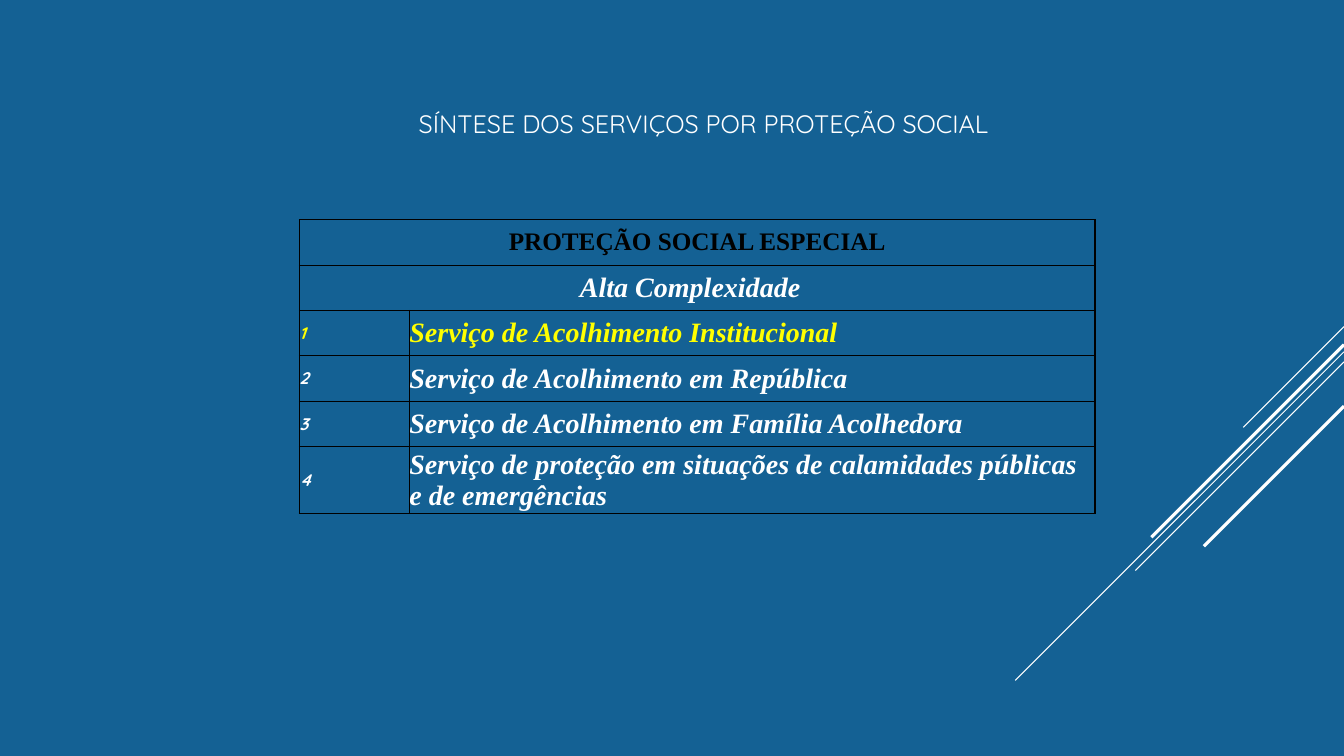
from dataclasses import dataclass

from lxml.etree import SubElement
from pptx import Presentation
from pptx.dml.color import RGBColor
from pptx.enum.shapes import MSO_CONNECTOR
from pptx.enum.text import MSO_ANCHOR, PP_ALIGN
from pptx.oxml.ns import qn
from pptx.util import Inches, Pt


@dataclass(frozen=True)
class Theme:
    background: str = "146194"
    light: str = "FFFFFF"
    dark: str = "000000"
    highlight: str = "FFFF00"
    title_font: str = "Quicksand"
    table_font: str = "Times New Roman"
    heading_size: int = 18
    service_size: int = 20
    number_size: int = 12
    border_width: float = 1


THEME = Theme()
WIDTH, HEIGHT = 13.33, 7.5

# Diagonal rays from the right edge: start height, horizontal run, width in points
RAYS = [(3.24, 1.0, 0.75), (3.49, 3.26, 0.75), (3.59, 2.07, 0.75),
        (3.42, 1.91, 2.25), (4.03, 1.39, 2.25)]

TABLE_LEFT, TABLE_TOP = 2.97, 2.18
COLUMNS = [1.09, 6.8]
ROW_HEIGHT = 0.45
SERVICES = [
    "Serviço de Acolhimento Institucional",
    "Serviço de Acolhimento em República",
    "Serviço de Acolhimento em Família Acolhedora",
    "Serviço de proteção em situações de calamidades públicas e de emergências",
]


def write(frame, text, font, size, color, bold=False, italic=False,
          align=PP_ALIGN.LEFT):
    """Fill a text frame with one formatted paragraph."""
    frame.text = text
    para = frame.paragraphs[0]
    para.alignment = align
    span = para.runs[0].font
    span.name, span.size = font, Pt(size)
    span.bold, span.italic = bold, italic
    span.color.rgb = RGBColor.from_string(color)


def add_ray(page, top, run, width):
    """Draw a 45 degree line down and left from the right edge."""
    ray = page.shapes.add_connector(
        MSO_CONNECTOR.STRAIGHT, Inches(WIDTH), Inches(top),
        Inches(WIDTH - run), Inches(top + run))
    ray.line.color.rgb = RGBColor.from_string(THEME.light)
    ray.line.width = Pt(width)
    SubElement(ray._element.spPr, qn("a:effectLst"))


def add_title(page, text):
    box = page.shapes.add_textbox(
        Inches(2.73), Inches(0.6), Inches(8.5), Inches(1.25))
    frame = box.text_frame
    frame.word_wrap = True
    frame.vertical_anchor = MSO_ANCHOR.MIDDLE
    frame.margin_left = frame.margin_right = 0
    frame.margin_top = frame.margin_bottom = 0
    write(frame, text, THEME.title_font, THEME.heading_size, THEME.light,
          align=PP_ALIGN.CENTER)


def style_cell(cell):
    """Remove margins and fill, and outline the cell."""
    cell.margin_left = cell.margin_right = 0
    cell.margin_top = cell.margin_bottom = 0
    cell.vertical_anchor = MSO_ANCHOR.MIDDLE
    properties = cell._tc.get_or_add_tcPr()
    for side in ("a:lnL", "a:lnR", "a:lnT", "a:lnB"):
        border = SubElement(properties, qn(side), w=str(Pt(THEME.border_width)))
        fill = SubElement(border, qn("a:solidFill"))
        SubElement(fill, qn("a:srgbClr"), val=THEME.dark)
    cell.fill.background()


def add_services_table(page):
    row_count = len(SERVICES) + 2
    table = page.shapes.add_table(
        row_count, len(COLUMNS), Inches(TABLE_LEFT), Inches(TABLE_TOP),
        Inches(sum(COLUMNS)), Inches(ROW_HEIGHT * row_count)).table
    table.first_row = table.horz_banding = False
    for column, width in zip(table.columns, COLUMNS):
        column.width = Inches(width)
    for row in table.rows:
        row.height = Inches(ROW_HEIGHT)
    for cell in table.iter_cells():
        style_cell(cell)

    # Merged headings
    headings = [
        ("PROTEÇÃO SOCIAL ESPECIAL", THEME.heading_size, THEME.dark, False),
        ("Alta Complexidade", THEME.service_size, THEME.light, True),
    ]
    for index, (text, size, color, italic) in enumerate(headings):
        cell = table.cell(index, 0)
        cell.merge(table.cell(index, 1))
        write(cell.text_frame, text, THEME.table_font, size, color,
              bold=True, italic=italic, align=PP_ALIGN.CENTER)
    table.cell(1, 0).margin_right = Inches(0.14)

    # Numbered services, the first one highlighted
    for number, service in enumerate(SERVICES, start=1):
        color = THEME.highlight if number == 1 else THEME.light
        row = number + 1
        write(table.cell(row, 0).text_frame, str(number), THEME.title_font,
              THEME.number_size, color, bold=True, italic=True)
        write(table.cell(row, 1).text_frame, service, THEME.table_font,
              THEME.service_size, color, bold=True, italic=True)


def main():
    deck = Presentation()
    deck.slide_width, deck.slide_height = Inches(WIDTH), Inches(HEIGHT)
    page = deck.slides.add_slide(deck.slide_layouts[6])
    background = page.background.fill
    background.solid()
    background.fore_color.rgb = RGBColor.from_string(THEME.background)

    for ray in RAYS:
        add_ray(page, *ray)
    add_title(page, "SÍNTESE DOS SERVIÇOS POR PROTEÇÃO SOCIAL")
    add_services_table(page)
    deck.save("out.pptx")


if __name__ == "__main__":
    main()
